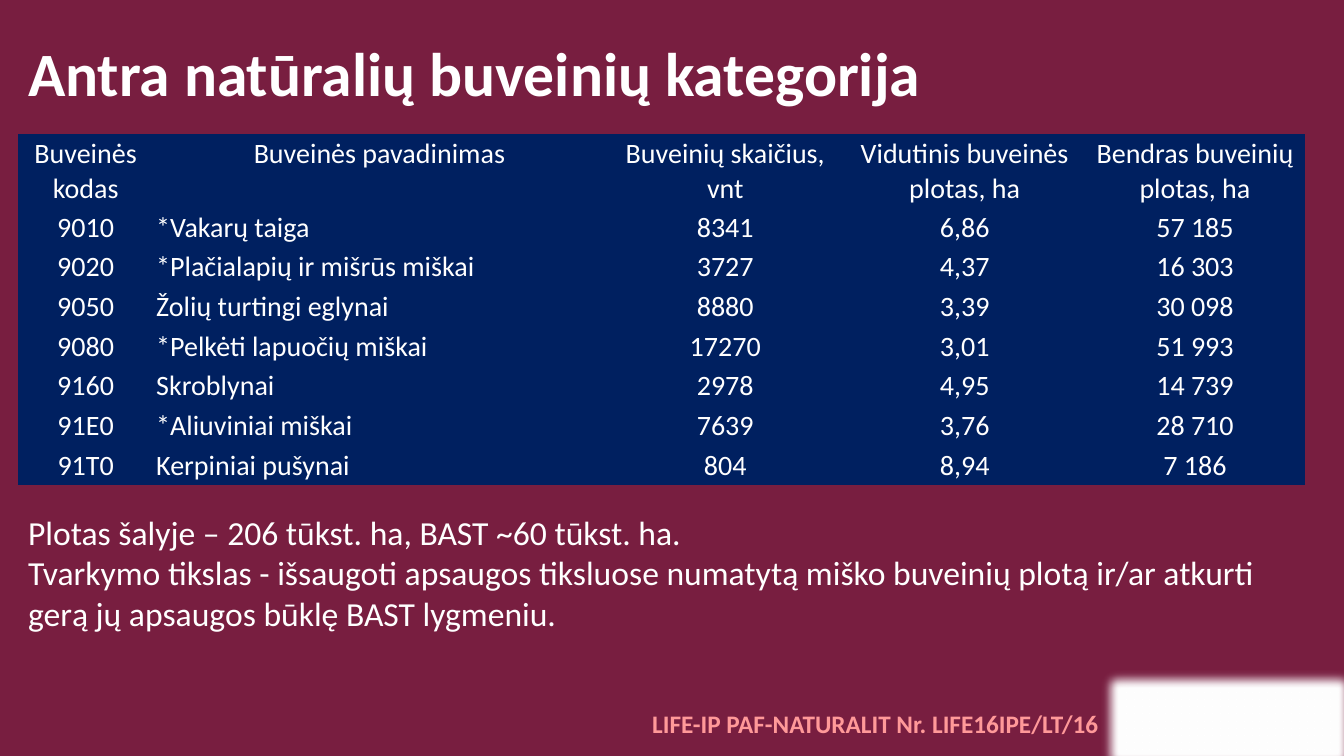
import dataclasses

import lxml.etree
import pptx
import pptx.dml.color
import pptx.enum.shapes
import pptx.enum.text
import pptx.oxml.ns
import pptx.util

ALIGN = pptx.enum.text.PP_ALIGN
ANCHOR = pptx.enum.text.MSO_ANCHOR
WIDTH = pptx.util.Inches(13.33)
HEIGHT = pptx.util.Inches(7.5)
LEFT = 1.35
COLS = (10.05, 33.68, 17.78, 17.85, 16.43)
HEAD_ROW, BODY_ROW = 9.6, 4.67
PLAIN = "{2D5ABB26-0587-4C30-8999-92F81FD0307C}"

HEADS = ("Buveinės kodas", "Buveinės pavadinimas", "Buveinių skaičius, vnt",
         "Vidutinis buveinės plotas, ha", "Bendras buveinių plotas, ha")
ROWS = (
    ("9010", "*Vakarų taiga", "8341", "6,86", "57 185"),
    ("9020", "*Plačialapių ir mišrūs miškai", "3727", "4,37", "16 303"),
    ("9050", "Žolių turtingi eglynai", "8880", "3,39", "30 098"),
    ("9080", "*Pelkėti lapuočių miškai", "17270", "3,01", "51 993"),
    ("9160", "Skroblynai", "2978", "4,95", "14 739"),
    ("91E0", "*Aliuviniai miškai", "7639", "3,76", "28 710"),
    ("91T0", "Kerpiniai pušynai", "804", "8,94", "7 186"),
)
NOTES = (
    "Plotas šalyje – 206 tūkst. ha, BAST ~60 tūkst. ha.",
    "Tvarkymo tikslas - išsaugoti apsaugos tiksluose numatytą miško buveinių "
    "plotą ir/ar atkurti gerą jų apsaugos būklę BAST lygmeniu.",
)


@dataclasses.dataclass(frozen=True)
class Theme:
    """Colours and type sizes of the slide."""
    font: str = "Calibri"
    back: str = "781E40"
    cell: str = "002060"
    white: str = "FFFFFF"
    pink: str = "FF9999"
    title: int = 44
    body: int = 24
    table: int = 20
    foot: int = 18


THEME = Theme()


def across(share):
    """Turn a percentage of the slide width into a length."""
    return round(WIDTH * share / 100)


def down(share):
    """Turn a percentage of the slide height into a length."""
    return round(HEIGHT * share / 100)


def place(x, y, w, h):
    """Turn four percentages into a position and size."""
    return across(x), down(y), across(w), down(h)


def paint(fill, color):
    """Make a fill solid in one colour."""
    fill.solid()
    fill.fore_color.rgb = pptx.dml.color.RGBColor.from_string(color)


def write(para, text, size, color=THEME.white, bold=False):
    """Add one styled run to a paragraph."""
    run = para.add_run()
    run.text = text
    run.font.name = THEME.font
    run.font.size = pptx.util.Pt(size)
    run.font.bold = bold
    run.font.color.rgb = pptx.dml.color.RGBColor.from_string(color)


def add_text(slide, area, lines, size, color=THEME.white, bold=False,
             wrap=True, anchor=ANCHOR.TOP, pitch=None):
    """Add a text box with one paragraph for each line."""
    frame = slide.shapes.add_textbox(*place(*area)).text_frame
    frame.word_wrap = wrap
    frame.vertical_anchor = anchor
    for index, line in enumerate(lines):
        para = frame.add_paragraph() if index else frame.paragraphs[0]
        para.line_spacing = pitch
        write(para, line, size, color, bold)


def add_panel(slide, area):
    """Add a white rectangle with soft edges."""
    panel = slide.shapes.add_shape(
        pptx.enum.shapes.MSO_SHAPE.RECTANGLE, *place(*area))
    panel.shadow.inherit = False
    paint(panel.fill, THEME.white)
    paint(panel.line.fill, THEME.white)
    panel.line.width = pptx.util.Pt(1)
    qn = pptx.oxml.ns.qn
    effects = panel.element.spPr.find(qn("a:effectLst"))
    lxml.etree.SubElement(effects, qn("a:softEdge"), rad="112500")


def fill_cell(cell, text, align, anchor):
    """Style one table cell and write its text."""
    paint(cell.fill, THEME.cell)
    cell.vertical_anchor = anchor
    inset = pptx.util.Inches(0.03)
    cell.margin_left = cell.margin_right = inset
    cell.margin_top = cell.margin_bottom = inset
    para = cell.text_frame.paragraphs[0]
    para.alignment = align
    write(para, text, THEME.table)


def add_grid(slide, top):
    """Add the habitat table with its heading row."""
    data = (HEADS,) + ROWS
    tall = HEAD_ROW + BODY_ROW * len(ROWS)
    frame = slide.shapes.add_table(
        len(data), len(COLS), *place(LEFT, top, sum(COLS), tall))
    table = frame.table
    table.horz_banding = False
    table.first_row = False
    style = frame.element.find(".//" + pptx.oxml.ns.qn("a:tableStyleId"))
    style.text = PLAIN
    for column, share in zip(table.columns, COLS):
        column.width = across(share)
    for r, values in enumerate(data):
        table.rows[r].height = down(BODY_ROW if r else HEAD_ROW)
        for c, text in enumerate(values):
            align = ALIGN.JUSTIFY if r and c == 1 else ALIGN.CENTER
            anchor = ANCHOR.BOTTOM if r else ANCHOR.TOP
            fill_cell(table.cell(r, c), text, align, anchor)


def main():
    """Build and save the slide."""
    deck = pptx.Presentation()
    deck.slide_width, deck.slide_height = WIDTH, HEIGHT
    slide = deck.slides.add_slide(deck.slide_layouts[6])
    paint(slide.background.fill, THEME.back)
    add_panel(slide, (81.55, 88, 19.73, 14.8))
    add_text(slide, (47.79, 93.07, 35.03, 5.33),
             ["LIFE-IP PAF-NATURALIT Nr. LIFE16IPE/LT/16"],
             THEME.foot, THEME.pink, bold=True, wrap=False)
    add_text(slide, (LEFT, 1.33, 86.27, 17.73),
             ["Antra natūralių buveinių kategorija"], THEME.title,
             bold=True, anchor=ANCHOR.MIDDLE, pitch=0.9)
    add_grid(slide, 17.73)
    add_text(slide, (LEFT, 67.07, 97.67, 17.47), NOTES, THEME.body)
    deck.save("out.pptx")


if __name__ == "__main__":
    main()
